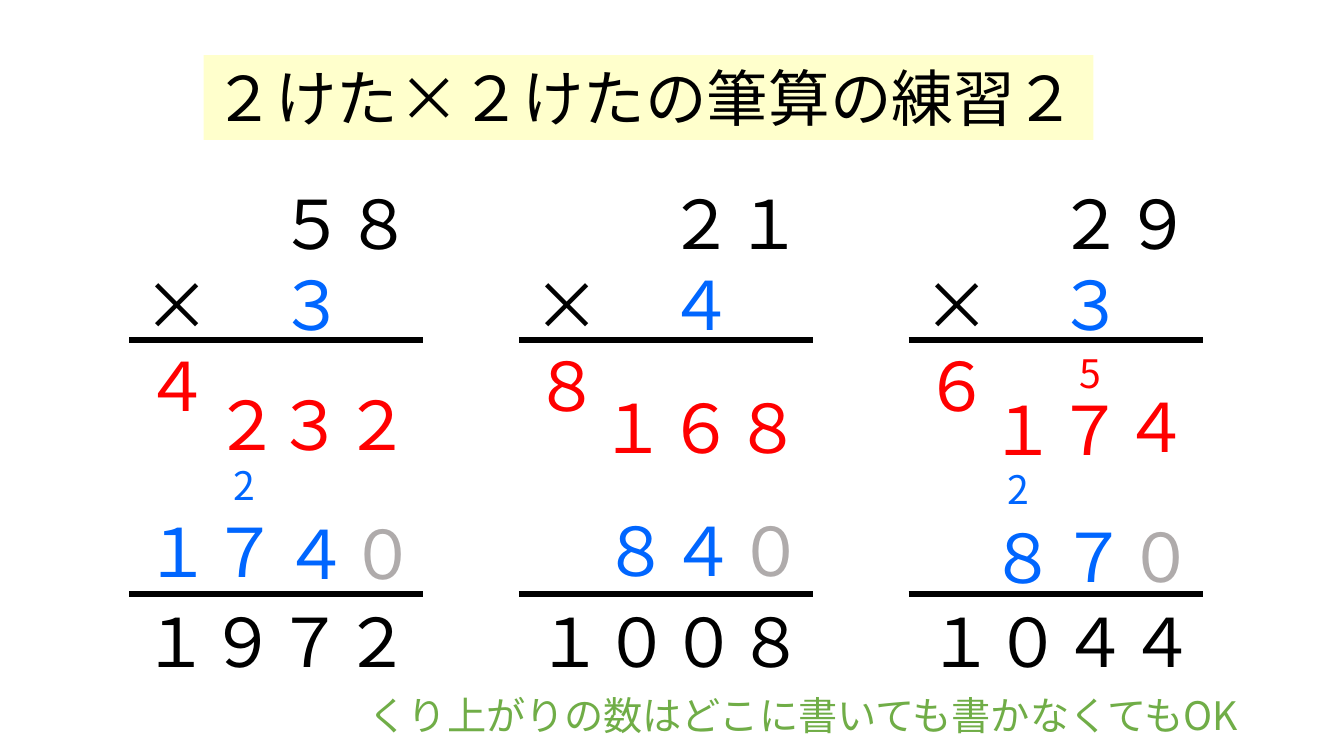
"""Build a practice slide for two-digit by two-digit long multiplication."""
import dataclasses
import typing

import pptx
import pptx.dml.color
import pptx.enum.shapes
import pptx.enum.text
import pptx.oxml
import pptx.oxml.ns
import pptx.util

BLACK = pptx.dml.color.RGBColor(0x00, 0x00, 0x00)
RED = pptx.dml.color.RGBColor(0xFF, 0x00, 0x00)
BLUE = pptx.dml.color.RGBColor(0x00, 0x66, 0xFF)
GRAY = pptx.dml.color.RGBColor(0xAF, 0xAB, 0xAB)
GREEN = pptx.dml.color.RGBColor(0x70, 0xAD, 0x47)
CREAM = pptx.dml.color.RGBColor(0xFF, 0xFF, 0xCC)

FONT_NAME = "Noto Sans CJK JP"
SLIDE_WIDTH = pptx.util.Inches(13.33)
SLIDE_HEIGHT = pptx.util.Inches(7.5)
COLUMN = SLIDE_WIDTH / 20
ROW = SLIDE_HEIGHT / 10
DIGIT_SIZE = 48
NOTE_SIZE = 28
LINE_SPACING = 1.2
RULE_ROWS = (4.5, 7.86)
RULE_COLUMNS = 4.38


class Run(typing.NamedTuple):
    text: str
    color: pptx.dml.color.RGBColor


class Line(typing.NamedTuple):
    runs: tuple[Run, ...]
    indent: float = 0


@dataclasses.dataclass(frozen=True)
class Label:
    lines: tuple[Line, ...]
    column: float
    row: float
    columns: float
    rows: float = 1.21
    size: int = DIGIT_SIZE


@dataclasses.dataclass(frozen=True)
class Problem:
    multiplicand: str
    multiplier: str
    tens_product: str
    answer: str
    column: float
    answer_column: float


PROBLEMS = (
    Problem("５８", "３", "４", "１９７２", 1.99, 1.97),
    Problem("２１", "４", "８", "１００８", 7.79, 7.83),
    Problem("２９", "３", "６", "１０４４", 13.59, 13.65),
)


def row_label(column: float, row: float, columns: float, *runs: Run) -> Label:
    """Return a one-line label of large digits."""
    return Label((Line(runs),), column, row, columns)


def carry_label(text: str, color: pptx.dml.color.RGBColor, column: float,
                row: float, columns: float) -> Label:
    """Return a one-line label of small text."""
    return Label((Line((Run(text, color),)),), column, row, columns, 0.76, NOTE_SIZE)


TITLE = Label((Line((Run("２けた×２けたの筆算の練習２", BLACK),)),), 3.03, 0.73, 13.24, 1.12, 44)
WORKING = (
    row_label(3.96, 5, 2.46, Run("３２", RED)),
    row_label(4.05, 6.71, 2.46, Run("４", BLUE), Run("０", GRAY)),
    row_label(8.78, 5.04, 3.44, Run("１６８", RED)),
    row_label(8.82, 6.67, 3.47, Run("８４", BLUE), Run("０", GRAY)),
    row_label(16.56, 5.03, 1.37, Run("４", RED)),
    row_label(15.63, 6.75, 2.46, Run("７", BLUE), Run("０", GRAY)),
    row_label(3.03, 5, 1.43, Run("２", RED)),
    row_label(2, 6.68, 2.46, Run("１７", BLUE)),
    row_label(14.57, 5.07, 2.46, Run("１７", RED)),
    row_label(14.57, 6.76, 1.23, Run("８", BLUE)),
    carry_label("2", BLUE, 3.33, 6.04, 1.08),
    carry_label("2", BLUE, 14.85, 6.09, 0.54),
    carry_label("5", RED, 15.92, 4.55, 0.54),
    carry_label("くり上がりの数はどこに書いても書かなくてもOK", GREEN, 5.34, 9.08, 13.94),
)


def apply_format(target: typing.Any, values: dict[str, typing.Any]) -> None:
    """Set each named attribute on the target."""
    for name, value in values.items():
        setattr(target, name, value)


def across(columns: float) -> int:
    """Return the length of a number of grid columns."""
    return round(columns * COLUMN)


def down(rows: float) -> int:
    """Return the length of a number of grid rows."""
    return round(rows * ROW)


def write_label(shape: typing.Any, label: Label) -> None:
    """Place a shape on the grid and write the label's lines in it."""
    apply_format(shape, {
        "left": across(label.column), "top": down(label.row),
        "width": across(label.columns), "height": down(label.rows),
    })
    frame = shape.text_frame
    apply_format(frame, {
        "word_wrap": True,
        "auto_size": pptx.enum.text.MSO_AUTO_SIZE.NONE,
        "vertical_anchor": pptx.enum.text.MSO_ANCHOR.TOP,
        "margin_left": pptx.util.Inches(0.1),
        "margin_right": pptx.util.Inches(0.1),
        "margin_top": pptx.util.Inches(0.05),
        "margin_bottom": pptx.util.Inches(0.05),
    })
    for index, line in enumerate(label.lines):
        paragraph = frame.add_paragraph() if index else frame.paragraphs[0]
        apply_format(paragraph, {
            "alignment": pptx.enum.text.PP_ALIGN.LEFT,
            "line_spacing": pptx.util.Pt(label.size * LINE_SPACING),
            "space_before": pptx.util.Pt(0),
            "space_after": pptx.util.Pt(0),
        })
        paragraph_properties = paragraph._p.get_or_add_pPr()
        paragraph_properties.set("marL", str(across(line.indent)))
        paragraph_properties.set("indent", "0")
        for text, color in line.runs:
            run = paragraph.add_run()
            run.text = text
            apply_format(run.font, {"name": FONT_NAME, "size": pptx.util.Pt(label.size)})
            run.font.color.rgb = color
            properties = run._r.get_or_add_rPr()
            properties.set("lang", "ja-JP")
            east_asian = pptx.oxml.parse_xml(
                f'<a:ea {pptx.oxml.ns.nsdecls("a")} typeface="{FONT_NAME}"/>')
            properties.find(pptx.oxml.ns.qn("a:latin")).addnext(east_asian)


def add_label(slide: typing.Any, label: Label) -> None:
    """Add a text box for a label."""
    write_label(slide.shapes.add_textbox(0, 0, 0, 0), label)


def add_rule(slide: typing.Any, column: float, row: float) -> None:
    """Add a thick horizontal calculation rule."""
    rule = slide.shapes.add_connector(
        pptx.enum.shapes.MSO_CONNECTOR.STRAIGHT, across(column), down(row),
        across(column + RULE_COLUMNS), down(row))
    rule.line.color.rgb = BLACK
    rule.line.width = pptx.util.Pt(4.5)
    rule._element.spPr.append(
        pptx.oxml.parse_xml(f'<a:effectLst {pptx.oxml.ns.nsdecls("a")}/>'))


def add_problem(slide: typing.Any, problem: Problem) -> None:
    """Add the operands, rules and answer of one calculation."""
    operands = (
        Line((Run(problem.multiplicand, BLACK),), 2),
        Line((Run("×　", BLACK), Run(problem.multiplier, BLUE))),
        Line((Run(problem.tens_product, RED),)),
    )
    add_label(slide, Label(operands, problem.column, 2.35, 4.42, 2.29))
    for row in RULE_ROWS:
        add_rule(slide, problem.column - 0.07, row)
    add_label(slide, row_label(problem.answer_column, 7.88, 4.45, Run(problem.answer, BLACK)))


def main() -> None:
    """Build and save the presentation."""
    presentation = pptx.Presentation()
    apply_format(presentation, {"slide_width": SLIDE_WIDTH, "slide_height": SLIDE_HEIGHT})
    slide = presentation.slides.add_slide(presentation.slide_layouts.get_by_name("Title Only"))
    title = slide.shapes.title
    title.fill.solid()
    title.fill.fore_color.rgb = CREAM
    write_label(title, TITLE)
    for problem in PROBLEMS:
        add_problem(slide, problem)
    for label in WORKING:
        add_label(slide, label)
    presentation.save("out.pptx")


if __name__ == "__main__":
    main()
